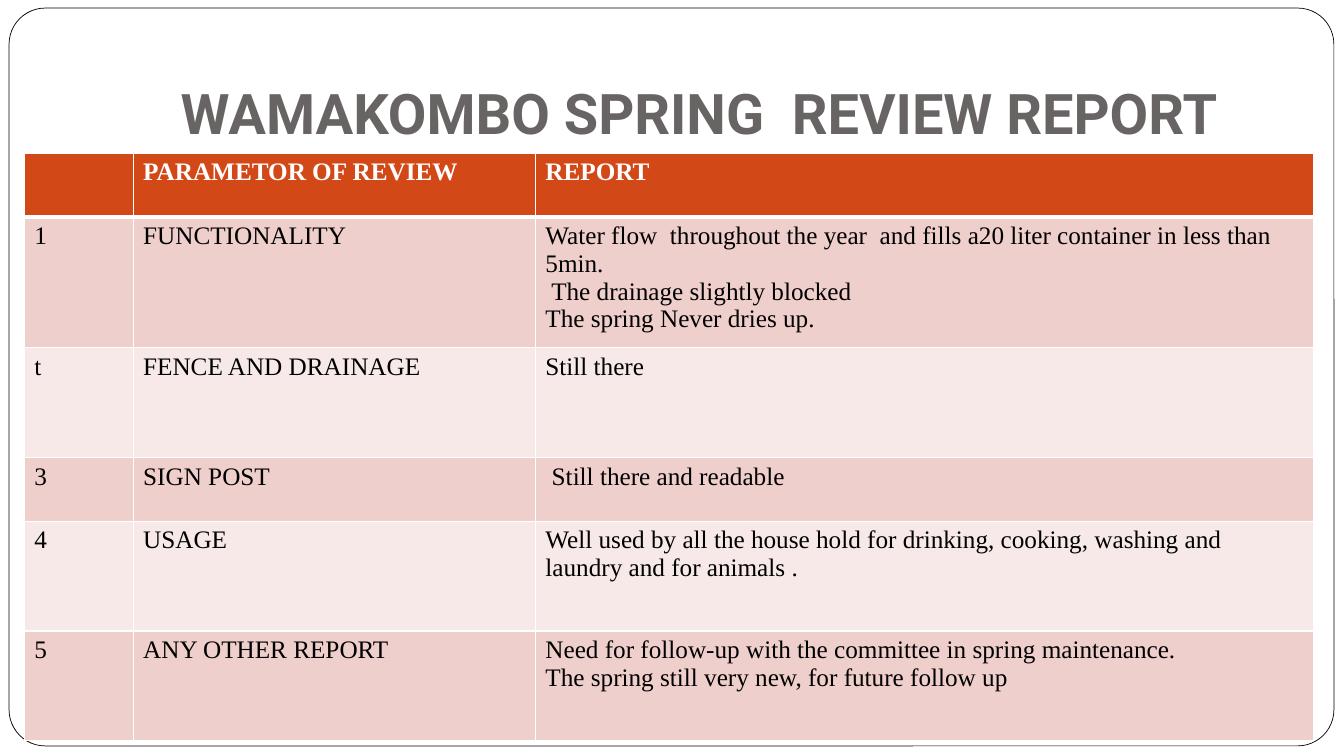
from dataclasses import dataclass

from lxml.etree import SubElement
from pptx import Presentation
from pptx.dml.color import RGBColor as Color
from pptx.enum.shapes import MSO_SHAPE as Preset
from pptx.enum.text import MSO_ANCHOR as Anchor, PP_ALIGN as Align
from pptx.oxml.ns import qn
from pptx.util import Inches, Pt


@dataclass(frozen=True)
class Theme:
    paper: str = "FFFFFF"
    ink: str = "000000"
    title: str = "696464"
    header: str = "D34817"
    bands: tuple = ("EFCFCC", "F7E9E8")
    title_font: str = "Roboto"
    body_font: str = "Times New Roman"
    title_size: int = 40
    body_size: int = 18
    frame_line: float = 0.5
    grid_line: int = 1
    header_line: int = 3


@dataclass(frozen=True)
class Box:
    left: float
    top: float
    width: float
    height: float

    def lengths(self):
        return [Inches(n) for n in (self.left, self.top, self.width, self.height)]


THEME = Theme()
SLIDE = Box(0, 0, 13.33, 7.5)
FRAME = Box(0.09, 0.08, 13.14, 7.32)
TITLE = Box(1.33, 0.3, 11.33, 1.25)
TABLE = Box(0.24, 1.52, 12.79, 5.62)

COLUMN_SHARES = (1.08, 3.99, 7.72)
SHORT_ROW, TALL_ROW = 0.63, 1.09
ROW_SHARES = (SHORT_ROW, TALL_ROW, TALL_ROW, SHORT_ROW, TALL_ROW, TALL_ROW)

REVIEW = [
    ("", "PARAMETOR OF REVIEW", "REPORT"),
    ("1", "FUNCTIONALITY",
     "Water flow  throughout the year  and fills a20 liter container in less than 5min.\n"
     " The drainage slightly blocked\n"
     "The spring Never dries up."),
    ("t", "FENCE AND DRAINAGE", "Still there"),
    ("3", "SIGN POST", " Still there and readable"),
    ("4", "USAGE",
     "Well used by all the house hold for drinking, cooking, washing and "
     "laundry and for animals ."),
    ("5", "ANY OTHER REPORT",
     "Need for follow-up with the committee in spring maintenance.\n"
     "The spring still very new, for future follow up"),
]


def write(frame, text, font=THEME.body_font, size=THEME.body_size,
          color=THEME.ink, bold=False, align=Align.LEFT):
    for index, line in enumerate(text.split("\n")):
        para = frame.add_paragraph() if index else frame.paragraphs[0]
        para.alignment = align
        para.font.size = Pt(size)
        if not line:
            continue
        span = para.add_run()
        span.text = line
        span.font.name = font
        span.font.size = Pt(size)
        span.font.bold = bold
        span.font.color.rgb = Color.from_string(color)


def paint(target, color):
    target.fill.solid()
    target.fill.fore_color.rgb = Color.from_string(color)


def rule_cell(cell, **widths):
    properties = cell._tc.get_or_add_tcPr()
    for side in ("lnL", "lnR", "lnT", "lnB"):
        width = Pt(widths.get(side, THEME.grid_line))
        line = SubElement(properties, qn(f"a:{side}"), w=str(width))
        fill = SubElement(line, qn("a:solidFill"))
        SubElement(fill, qn("a:srgbClr"), val=THEME.paper)


def add_frame(slide, box):
    panel = slide.shapes.add_shape(Preset.ROUNDED_RECTANGLE, *box.lengths())
    panel.adjustments[0] = 0.049
    panel.shadow.inherit = False
    paint(panel, THEME.paper)
    panel.line.color.rgb = Color.from_string(THEME.ink)
    panel.line.width = Pt(THEME.frame_line)


def add_title(slide, box, text):
    frame = slide.shapes.add_textbox(*box.lengths()).text_frame
    frame.word_wrap = True
    frame.vertical_anchor = Anchor.BOTTOM
    frame.margin_bottom = Inches(0.1)
    write(frame, text, font=THEME.title_font, size=THEME.title_size,
          color=THEME.title, bold=True, align=Align.CENTER)


def add_review_table(slide, box, records):
    holder = slide.shapes.add_table(len(records), len(COLUMN_SHARES), *box.lengths())
    table = holder.table
    for column, share in zip(table.columns, COLUMN_SHARES):
        column.width = Inches(box.width * share / sum(COLUMN_SHARES))
    for row, share in zip(table.rows, ROW_SHARES):
        row.height = Inches(box.height * share / sum(ROW_SHARES))
    for row_index, record in enumerate(records):
        is_header = row_index == 0
        fill = THEME.header if is_header else THEME.bands[(row_index - 1) % 2]
        edges = {"lnB": THEME.header_line} if is_header else {}
        if row_index == 1:
            edges = {"lnT": THEME.header_line}
        for column_index, text in enumerate(record):
            cell = table.cell(row_index, column_index)
            rule_cell(cell, **edges)
            paint(cell, fill)
            write(cell.text_frame, text, bold=is_header,
                  color=THEME.paper if is_header else THEME.ink)


def build_review_slide(deck):
    slide = deck.slides.add_slide(deck.slide_layouts[6])
    paint(slide.background, THEME.paper)
    add_frame(slide, FRAME)
    add_title(slide, TITLE, "WAMAKOMBO SPRING  REVIEW REPORT ")
    add_review_table(slide, TABLE, REVIEW)


def main():
    deck = Presentation()
    deck.slide_width = Inches(SLIDE.width)
    deck.slide_height = Inches(SLIDE.height)
    build_review_slide(deck)
    deck.save("out.pptx")


if __name__ == "__main__":
    main()
